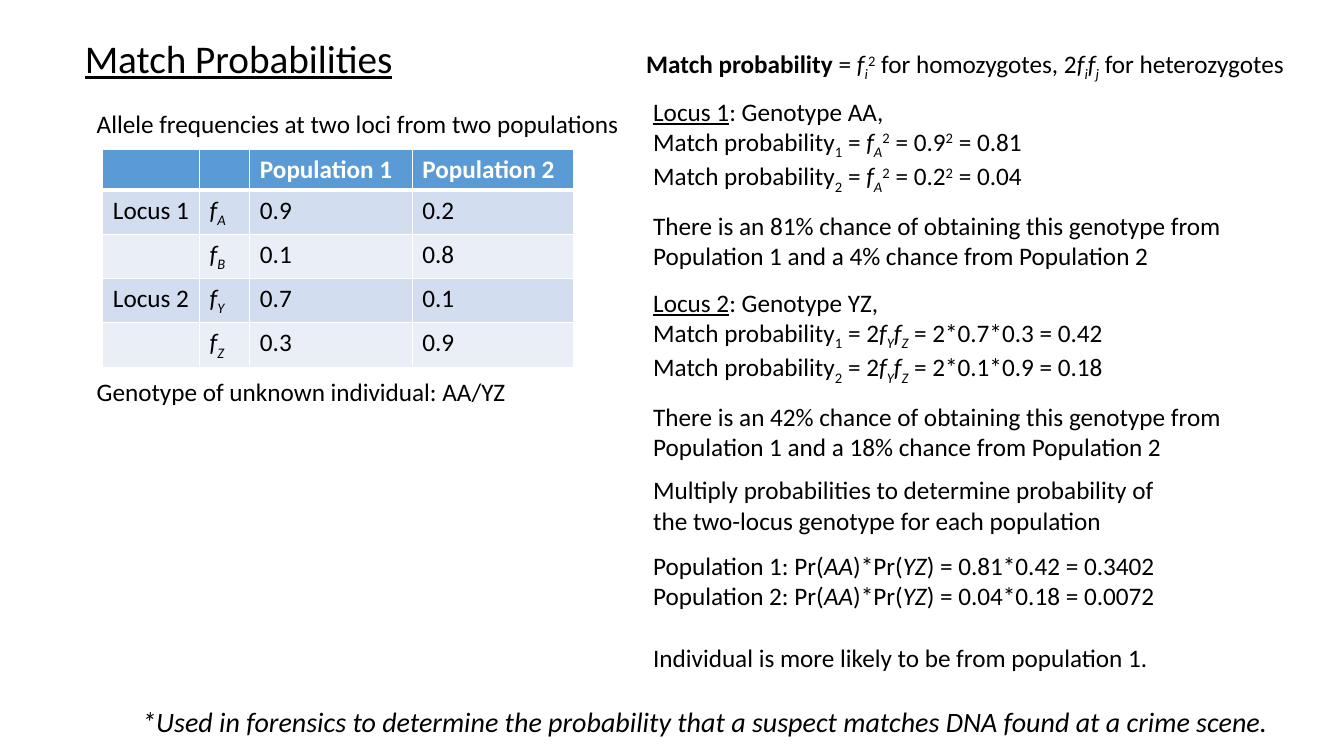
from dataclasses import dataclass

from lxml import etree
from pptx import Presentation
from pptx.dml.color import RGBColor
from pptx.enum.text import MSO_AUTO_SIZE
from pptx.oxml.ns import qn
from pptx.util import Pt

GROW = MSO_AUTO_SIZE.SHAPE_TO_FIT_TEXT
FONT = "Calibri"
COLORS = {"text": "000000", "white": "FFFFFF", "header": "5B9BD5",
          "band_dark": "D2DEEF", "band_light": "EAEFF7"}

# Each mark switches a format on and off inside a line of text
MARKS = {"`": "italic", "#": "bold", "|": "underline", "~": "sub", "^": "super"}
BASELINES = {"sub": "-25000", "super": "30000"}
HALF_GAP, FULL_GAP = 11, 22


@dataclass(frozen=True)
class Line:
    text: str
    gap: float = 0


@dataclass(frozen=True)
class TextBlock:
    left: float
    top: float
    width: float
    height: float
    lines: tuple[Line, ...]
    size: float = 18
    wrap: bool = False


def write_text(para, text: str, *, size: float = 18, color: str = "text",
               bold: bool = False, gap: float = 0) -> None:
    """Fill a paragraph, turning marked stretches into formatted spans."""
    para.space_before = Pt(gap)
    active: set[str] = set()
    pieces = [""]
    for char in text:
        if char in MARKS:
            pieces += [char, ""]
        else:
            pieces[-1] += char
    for piece in pieces:
        if piece in MARKS:
            active ^= {MARKS[piece]}
        elif piece:
            span = para.add_run()
            span.text = piece
            font = span.font
            font.name, font.size = FONT, Pt(size)
            font.color.rgb = RGBColor.from_string(COLORS[color])
            font.bold = bold or "bold" in active
            font.italic = "italic" in active
            font.underline = "underline" in active
            for name, offset in BASELINES.items():
                if name in active:
                    span._r.get_or_add_rPr().set("baseline", offset)


def draw_text(page, block: TextBlock) -> None:
    box = page.shapes.add_textbox(Pt(block.left), Pt(block.top),
                                  Pt(block.width), Pt(block.height))
    frame = box.text_frame
    frame.word_wrap = block.wrap
    frame.auto_size = GROW
    for index, line in enumerate(block.lines):
        para = frame.add_paragraph() if index else frame.paragraphs[0]
        write_text(para, line.text, size=block.size, gap=line.gap)


def set_borders(cell, widths: dict[str, float]) -> None:
    properties = cell._tc.get_or_add_tcPr()
    for side, width in widths.items():
        border = etree.SubElement(properties, qn(f"a:ln{side}"), w=str(Pt(width)))
        fill = etree.SubElement(border, qn("a:solidFill"))
        etree.SubElement(fill, qn("a:srgbClr"), val=COLORS["white"])


def draw_table(page, rows: list[tuple[str, ...]], widths: tuple[float, ...],
               left: float, top: float, row_height: float) -> None:
    frame = page.shapes.add_table(len(rows), len(widths), Pt(left), Pt(top),
                                  Pt(sum(widths)), Pt(row_height * len(rows)))
    table = frame.table
    for column, width in zip(table.columns, widths):
        column.width = Pt(width)
    for row_index, texts in enumerate(rows):
        is_header = row_index == 0
        band = "header" if is_header else "band_dark" if row_index % 2 else "band_light"
        borders = {"L": 1, "R": 1, "T": 3 if row_index == 1 else 1,
                   "B": 3 if is_header else 1}
        for column_index, text in enumerate(texts):
            cell = table.cell(row_index, column_index)
            set_borders(cell, borders)
            cell.fill.solid()
            cell.fill.fore_color.rgb = RGBColor.from_string(COLORS[band])
            write_text(cell.text_frame.paragraphs[0], text, bold=is_header,
                       color="white" if is_header else "text")


def locus_lines(locus: int, genotype: str, formula: str, results: tuple[str, str],
                chances: tuple[int, int]) -> tuple[Line, ...]:
    """Match probabilities of one locus in both populations."""
    matches = (Line(f"Match probability~{population}~ = {formula} = {result}")
               for population, result in enumerate(results, 1))
    return (Line(f"|Locus {locus}|: Genotype {genotype},"), *matches,
            Line(f"There is an {chances[0]}% chance of obtaining this genotype from "
                 f"Population 1 and a {chances[1]}% chance from Population 2", HALF_GAP))


FREQUENCIES = [
    ("", "", "Population 1", "Population 2"),
    ("Locus 1", "`f~A~`", "0.9", "0.2"),
    ("", "`f~B~`", "0.1", "0.8"),
    ("Locus 2", "`f~Y~`", "0.7", "0.1"),
    ("", "`f~Z~`", "0.3", "0.9"),
]

TEXT_BLOCKS = [
    # Left side: title and captions
    TextBlock(53.5, 21, 243.5, 41, (Line("|Match Probabilities|"),), size=28),
    TextBlock(62, 73.5, 391.5, 29,
              (Line("Allele frequencies at two loci from two populations"),)),
    TextBlock(62, 265.5, 310.5, 29, (Line("Genotype of unknown individual: AA/YZ"),)),
    # Right side: definition, the two loci and the conclusion
    TextBlock(454.5, 31, 479.5, 29,
              (Line("#Match probability #= `f~i~`^2^ for homozygotes, "
                    "2`f~i~f~j~` for heterozygotes"),)),
    TextBlock(459.5, 65, 479.5, 127.5,
              locus_lines(1, "AA", "`f~A~`^2^", ("0.9^2^ = 0.81", "0.2^2^ = 0.04"),
                          (81, 4)), wrap=True),
    TextBlock(459.5, 201.5, 441.5, 127.5,
              locus_lines(2, "YZ", "2`f~Y~f~Z~`",
                          ("2*0.7*0.3 = 0.42", "2*0.1*0.9 = 0.18"), (42, 18)), wrap=True),
    TextBlock(459.5, 335.5, 382.5, 170.5, (
        Line("Multiply probabilities to determine probability of "
             "the two-locus genotype for each population"),
        Line("Population 1: Pr(`AA`)*Pr(`YZ`) = 0.81*0.42 = 0.3402", HALF_GAP),
        Line("Population 2: Pr(`AA`)*Pr(`YZ`) = 0.04*0.18 = 0.0072"),
        Line("Individual is more likely to be from population 1.", FULL_GAP),
    ), wrap=True),
    # Footnote
    TextBlock(94.5, 499.5, 837.5, 31.5,
              (Line("`*Used in forensics to determine the probability that a suspect "
                    "matches DNA found at a crime scene.`"),), size=20),
]


def main() -> None:
    deck = Presentation()
    deck.slide_width, deck.slide_height = Pt(960), Pt(540)
    page = deck.slides.add_slide(deck.slide_layouts[6])
    draw_table(page, FREQUENCIES, (69, 36, 116, 115.5), 73.5, 106.5, 29.25)
    for block in TEXT_BLOCKS:
        draw_text(page, block)
    deck.save("out.pptx")


if __name__ == "__main__":
    main()
